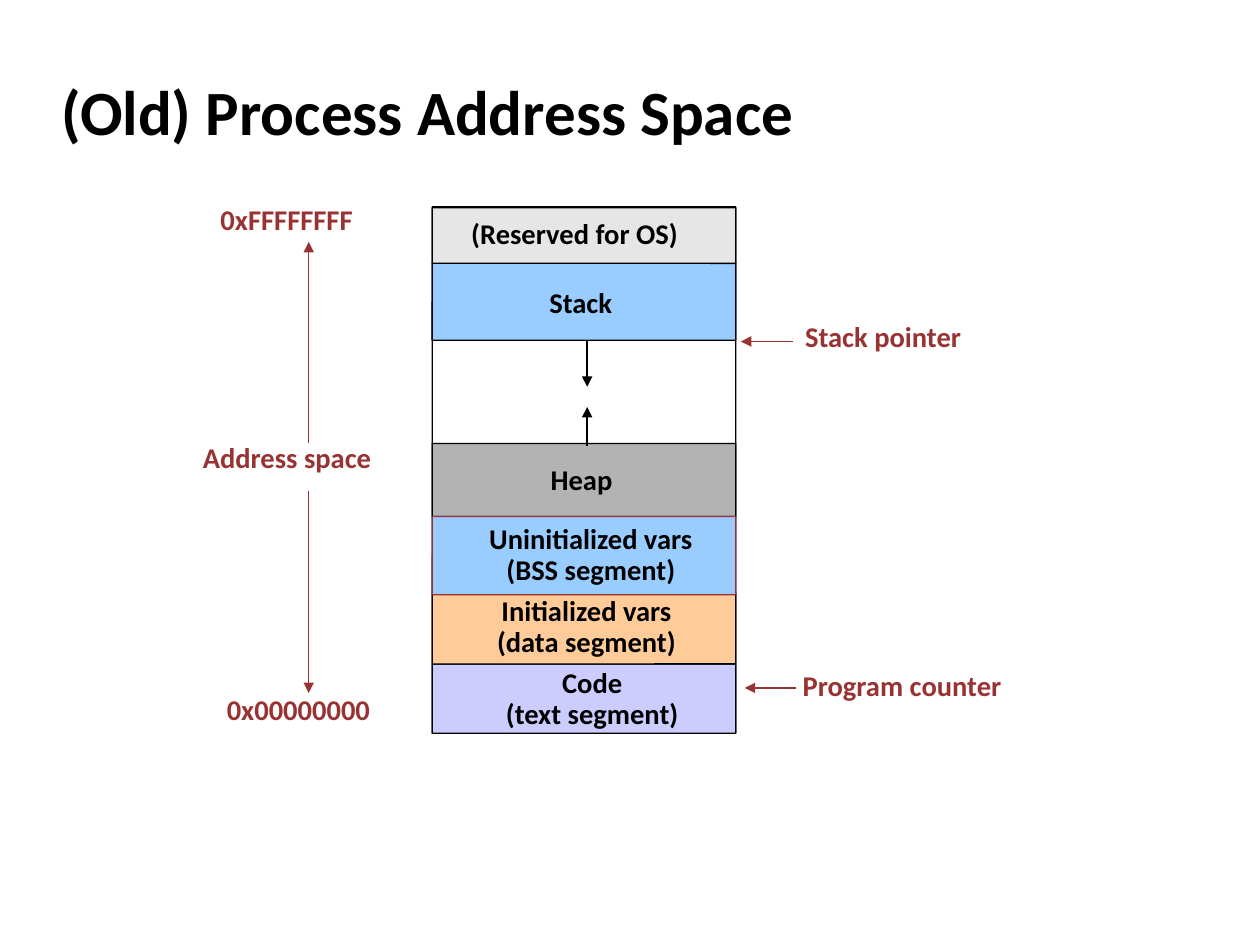
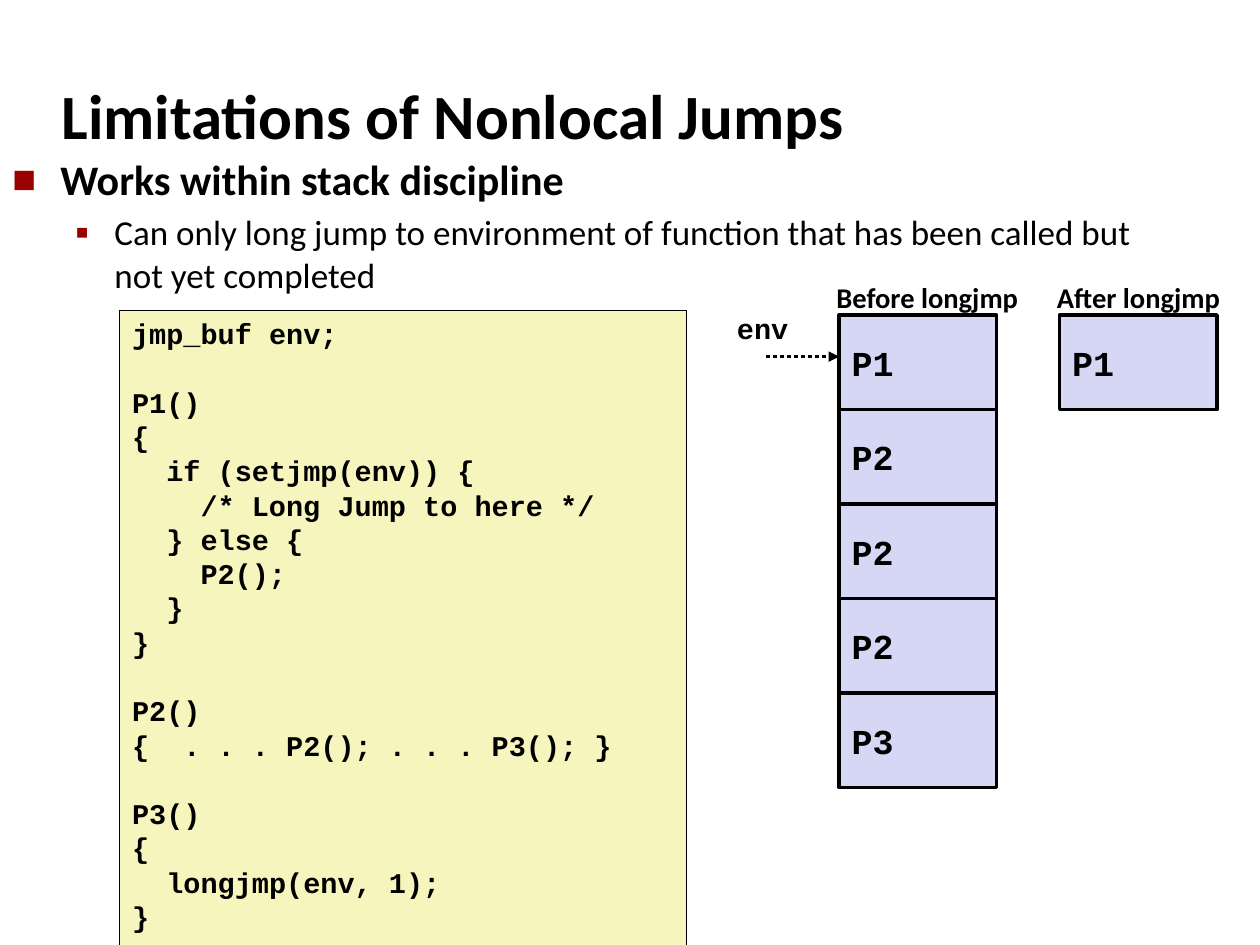
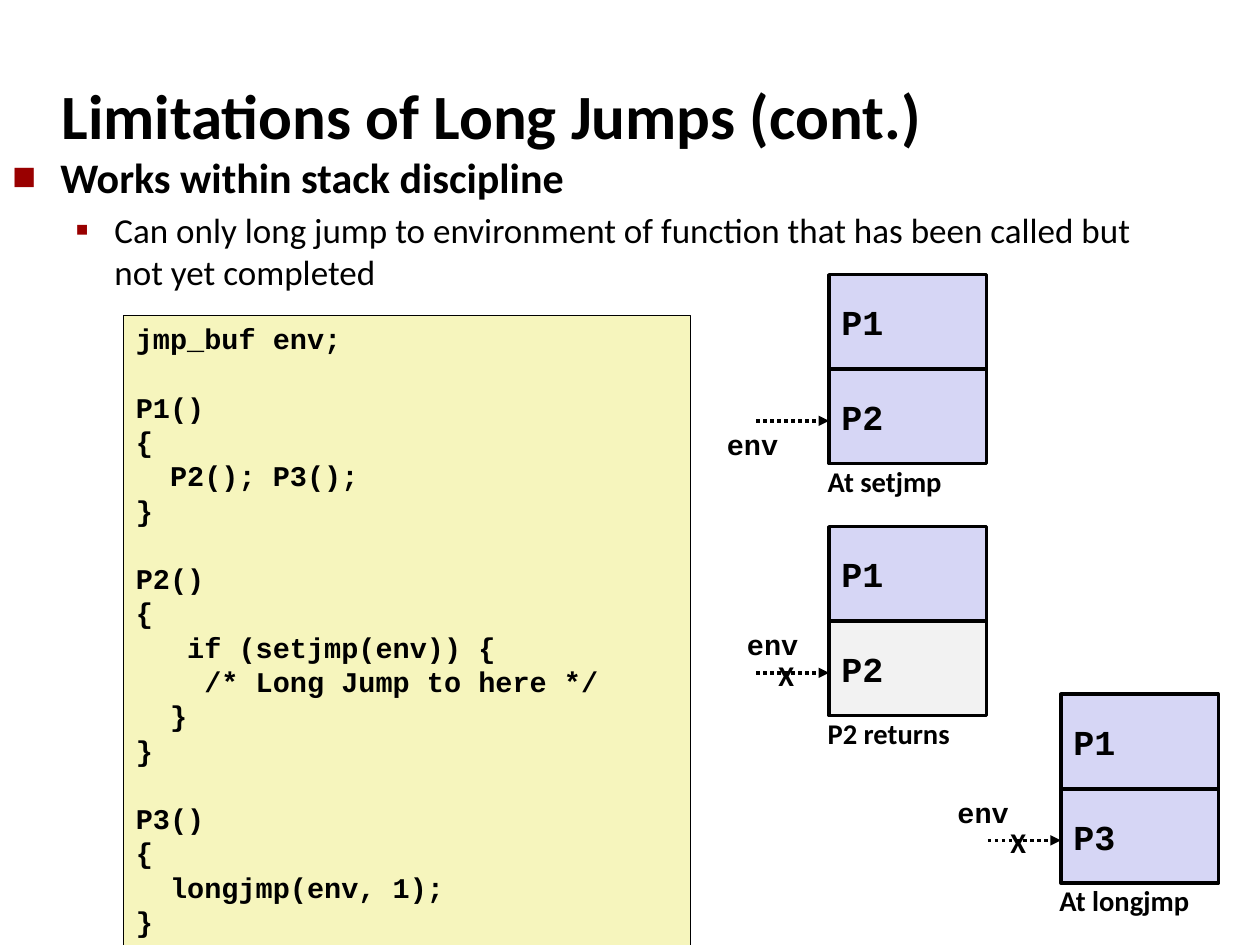
from dataclasses import dataclass

from lxml import etree
from pptx import Presentation, util as u
from pptx.dml.color import RGBColor
from pptx.enum import dml, shapes, text
from pptx.oxml.ns import qn

Inches = u.Inches


@dataclass(frozen=True)
class Theme:
    sans: str = "Calibri"
    mono: str = "Courier New"
    black: str = "000000"
    maroon: str = "993333"
    bullet: str = "990000"
    blue: str = "99CCFF"
    lilac: str = "CCCCFF"
    peach: str = "FFCC99"
    gray: str = "B3B3B3"
    pale_gray: str = "E6E6E6"
    frame: str = "D6D6F5"
    dead_frame: str = "F2F2F2"
    code: str = "F6F5BD"
    title_size: float = 36
    point_size: float = 24
    detail_size: float = 20
    frame_size: float = 20
    label_size: float = 16.3
    code_pitch: float = 19.6
    hairline: float = 0.25
    thin: float = 0.75
    thick: float = 2


THEME = Theme()
FRAME_W, FRAME_H = 1.25, 0.75
CODE_W, CODE_H = 4.5, 5.05
POINTER_LENGTH = 0.58
PAD = (0.1, 0.05)

NONLOCAL_CODE = """\
jmp_buf env;

P1()
{
  if (setjmp(env)) {
    /* Long Jump to here */
  } else {
    P2();
  }
}

P2()
{  . . . P2(); . . . P3(); }

P3()
{
  longjmp(env, 1);
}"""

RETURNED_CODE = """\
jmp_buf env;

P1()
{
  P2(); P3();
}

P2()
{
   if (setjmp(env)) {
    /* Long Jump to here */
  }
}

P3()
{
  longjmp(env, 1);
}"""


def rgb(value):
    return RGBColor.from_string(value)


def box(left, top, width, height):
    return [Inches(round(n, 2)) for n in (left, top, width, height)]


def set_frame(holder, pad=PAD, wrap=False, anchor=text.MSO_ANCHOR.TOP):
    frame = holder.text_frame
    across, down = (Inches(n) for n in pad)
    settings = {
        "margin_left": across, "margin_right": across,
        "margin_top": down, "margin_bottom": down,
        "word_wrap": wrap, "vertical_anchor": anchor,
        "auto_size": text.MSO_AUTO_SIZE.NONE,
    }
    for name, value in settings.items():
        setattr(frame, name, value)
    return frame


def write(paragraph, words, size, font=THEME.sans, color=THEME.black, bold=True):
    run = paragraph.add_run()
    run.text = words
    for name, value in {"name": font, "size": u.Pt(size), "bold": bold}.items():
        setattr(run.font, name, value)
    run.font.color.rgb = rgb(color)


def add_lines(frame, count):
    """Return the first paragraph and as many new ones as are needed."""
    return [frame.paragraphs[0]] + [frame.add_paragraph() for _ in range(count - 1)]


def indent(paragraph, left, first=0):
    props = paragraph._p.get_or_add_pPr()
    props.set("marL", str(Inches(left)))
    props.set("indent", str(Inches(first)))
    return props


def add_block(parent, kind, place, fill, line=THEME.black, width=THEME.thin):
    block = parent.add_shape(kind, *box(*place))
    block.shadow.inherit = False
    if fill:
        block.fill.solid()
        block.fill.fore_color.rgb = rgb(fill)
    else:
        block.fill.background()
    block.line.color.rgb = rgb(line)
    block.line.width = u.Pt(width)
    return block


def add_arrow(parent, start, end, color=THEME.black, width=THEME.thin, dotted=False):
    ends = [Inches(round(n, 2)) for n in (*start, *end)]
    arrow = parent.add_connector(shapes.MSO_CONNECTOR.STRAIGHT, *ends)
    arrow.line.color.rgb = rgb(color)
    arrow.line.width = u.Pt(width)
    if dotted:
        arrow.line.dash_style = dml.MSO_LINE.ROUND_DOT
    etree.SubElement(arrow.line._get_or_add_ln(), qn("a:tailEnd"), type="triangle")
    etree.SubElement(arrow._element.spPr, qn("a:effectLst"))


def add_label(parent, words, left, top, width, font=THEME.sans):
    label = parent.add_textbox(*box(left, top, width, 0.38))
    write(set_frame(label).paragraphs[0], words, THEME.label_size, font)


def add_map_label(parent, words, place, color=THEME.black):
    """Tightly set label of the memory map; a second line is centred below."""
    label = parent.add_textbox(*box(*place))
    frame = set_frame(label, pad=(0, 0))
    lines = words.split("\n")
    for number, (paragraph, line) in enumerate(zip(add_lines(frame, len(lines)), lines)):
        paragraph.line_spacing = 0.9 if number else 0.93
        if len(lines) > 1:
            paragraph.alignment = text.PP_ALIGN.CENTER
        write(paragraph, line, THEME.label_size, color=color)


def add_title(slide, words, spacing=1.0):
    title = slide.shapes.add_textbox(*box(0.39, 0.49, 8.3, 0.83))
    frame = set_frame(title, wrap=True, anchor=text.MSO_ANCHOR.MIDDLE)
    frame.paragraphs[0].line_spacing = spacing
    write(frame.paragraphs[0], words, THEME.title_size)


def add_bullet(paragraph, mark, percent, left, first):
    props = indent(paragraph, left, first)
    color = etree.SubElement(props, qn("a:buClr"))
    etree.SubElement(color, qn("a:srgbClr"), val=THEME.bullet)
    etree.SubElement(props, qn("a:buSzPct"), val=str(percent * 1000))
    etree.SubElement(props, qn("a:buFont"), typeface=THEME.sans)
    etree.SubElement(props, qn("a:buChar"), char=mark)


def add_discipline_points(slide, top):
    body = slide.shapes.add_textbox(*box(0, top, 9.09, 1.27))
    point, detail = add_lines(set_frame(body, wrap=True), 2)
    add_bullet(point, "■", 60, 0.38, -0.38)
    write(point, "Works within stack discipline", THEME.point_size)
    detail.level = 1
    detail.space_before = u.Pt(4)
    add_bullet(detail, "▪", 110, 0.81, -0.31)
    write(detail, "Can only long jump to environment of function that has been "
          "called but not yet completed", THEME.detail_size, bold=False)


def add_code(slide, source, left, top):
    """Code panel; source indentation and empty lines become paragraph format."""
    panel = add_block(slide.shapes, shapes.MSO_SHAPE.RECTANGLE,
                      (left, top, CODE_W, CODE_H), THEME.code, width=THEME.hairline)
    frame = set_frame(panel, wrap=True)
    character = 0.6 * THEME.label_size / 72
    lines = source.split("\n")
    filled = [n for n, line in enumerate(lines) if line]
    for paragraph, n in zip(add_lines(frame, len(filled)), filled):
        code = lines[n].lstrip()
        paragraph.alignment = text.PP_ALIGN.LEFT
        paragraph.line_spacing = u.Pt(THEME.code_pitch)
        if n and not lines[n - 1]:
            paragraph.space_before = u.Pt(THEME.code_pitch)
        indent(paragraph, character * (len(lines[n]) - len(code)))
        write(paragraph, code, THEME.label_size, THEME.mono)


def add_call_stack(parent, left, top, calls, returned=()):
    for row, call in enumerate(calls):
        fill = THEME.dead_frame if call in returned else THEME.frame
        place = (left, top + row * FRAME_H, FRAME_W, FRAME_H)
        block = add_block(parent, shapes.MSO_SHAPE.RECTANGLE, place, fill,
                          width=THEME.thick)
        frame = set_frame(block, anchor=text.MSO_ANCHOR.MIDDLE)
        frame.paragraphs[0].alignment = text.PP_ALIGN.LEFT
        write(frame.paragraphs[0], call, THEME.frame_size, THEME.mono)


def add_env_pointer(parent, tip, height, label_left, label_top):
    add_arrow(parent, (tip - POINTER_LENGTH, height), (tip, height),
              width=THEME.thick, dotted=True)
    add_label(parent, "env", label_left, label_top, 0.61, THEME.mono)


def add_stage(slide, left, top, calls, caption, valid=False, returned=()):
    """Two-frame stack with caption; an invalid env pointer is crossed out."""
    stage = slide.shapes.add_group_shape().shapes
    add_call_stack(stage, left, top, calls, returned)
    env_left, env_top = (0.91, 1.16) if valid else (0.75, 0.75)
    if caption == "At longjmp":
        env_left = 0.92
    add_env_pointer(stage, left, top + 1.16, left - env_left, top + env_top)
    add_label(stage, caption, left - 0.11, top + 1.45, 1.2)
    if not valid:
        add_label(stage, "X", left - 0.5, top + 0.99, 0.33)


def build_address_space(slide):
    add_title(slide, "(Old) Process Address Space", 0.93)
    left, width = 3.43, 2.41
    segments = [
        (1.64, 4.18, None, THEME.black),
        (2.09, 0.61, THEME.blue, THEME.black),
        (5.27, 0.55, THEME.lilac, THEME.black),
        (4.71, 0.56, THEME.peach, THEME.black),
        (3.52, 0.58, THEME.gray, THEME.black),
        (4.10, 0.62, THEME.blue, THEME.maroon),
        (1.65, 0.44, THEME.pale_gray, THEME.black),
    ]
    for top, height, fill, line in segments:
        segment = add_block(slide.shapes, shapes.MSO_SHAPE.ROUNDED_RECTANGLE,
                            (left, top, width, height), fill, line)
        segment.adjustments[0] = 0.003

    segment_labels = [
        ("(Reserved for OS)", (3.74, 1.74, 1.9, 0.26)),
        ("Stack", (4.36, 2.29, 0.59, 0.26)),
        ("Heap", (4.37, 3.69, 0.58, 0.26)),
        ("Uninitialized vars\n(BSS segment)", (3.73, 4.16, 1.92, 0.53)),
        ("Initialized vars\n(data segment)", (3.84, 4.73, 1.63, 0.53)),
        ("Code\n(text segment)", (3.91, 5.3, 1.58, 0.53)),
    ]
    for words, place in segment_labels:
        add_map_label(slide.shapes, words, place)

    side_labels = [
        ("0xFFFFFFFF", 1.75, 1.63, 1.44),
        ("Address space", 1.61, 3.52, 1.61),
        ("0x00000000", 1.8, 5.52, 1.36),
        ("Stack pointer", 6.39, 2.56, 1.43),
        ("Program counter", 6.37, 5.33, 1.85),
    ]
    for words, x, y, label_width in side_labels:
        add_map_label(slide.shapes, words, (x, y, label_width, 0.26), THEME.maroon)

    growth = [((4.66, 2.71), (4.66, 3.07)), ((4.66, 3.54), (4.66, 3.23))]
    for start, end in growth:
        add_arrow(slide.shapes, start, end)
    markers = [
        ((2.45, 3.52), (2.45, 1.92)), ((2.45, 3.9), (2.45, 5.5)),
        ((6.29, 2.71), (5.88, 2.71)), ((6.32, 5.46), (5.91, 5.46)),
    ]
    for start, end in markers:
        add_arrow(slide.shapes, start, end, THEME.maroon)


def build_nonlocal_jumps(slide):
    add_title(slide, "Limitations of Nonlocal Jumps")
    add_discipline_points(slide, 1.17)
    add_code(slide, NONLOCAL_CODE, 0.95, 2.46)
    before, after, top = 6.66, 8.41, 2.5
    add_call_stack(slide.shapes, before, top, ["P1", "P2", "P2", "P2", "P3"])
    add_env_pointer(slide.shapes, before, top + 0.33, 5.75, 2.42)
    add_call_stack(slide.shapes, after, top, ["P1"])
    add_label(slide.shapes, "Before longjmp", before - 0.12, 2.17, 1.66)
    add_label(slide.shapes, "After longjmp", after - 0.12, 2.17, 1.51)


def build_long_jumps(slide):
    add_title(slide, "Limitations of Long Jumps (cont.)")
    add_discipline_points(slide, 1.15)
    add_code(slide, RETURNED_CODE, 0.98, 2.5)
    add_stage(slide, 6.58, 2.18, ["P1", "P2"], "At setjmp", valid=True)
    add_stage(slide, 8.42, 5.51, ["P1", "P3"], "At longjmp")
    add_stage(slide, 6.58, 4.18, ["P1", "P2"], "P2 returns", returned=("P2",))


def main():
    deck = Presentation()
    deck.slide_width, deck.slide_height = Inches(10), Inches(7.5)
    for build in (build_address_space, build_nonlocal_jumps, build_long_jumps):
        build(deck.slides.add_slide(deck.slide_layouts[6]))
    deck.save("out.pptx")


if __name__ == "__main__":
    main()
